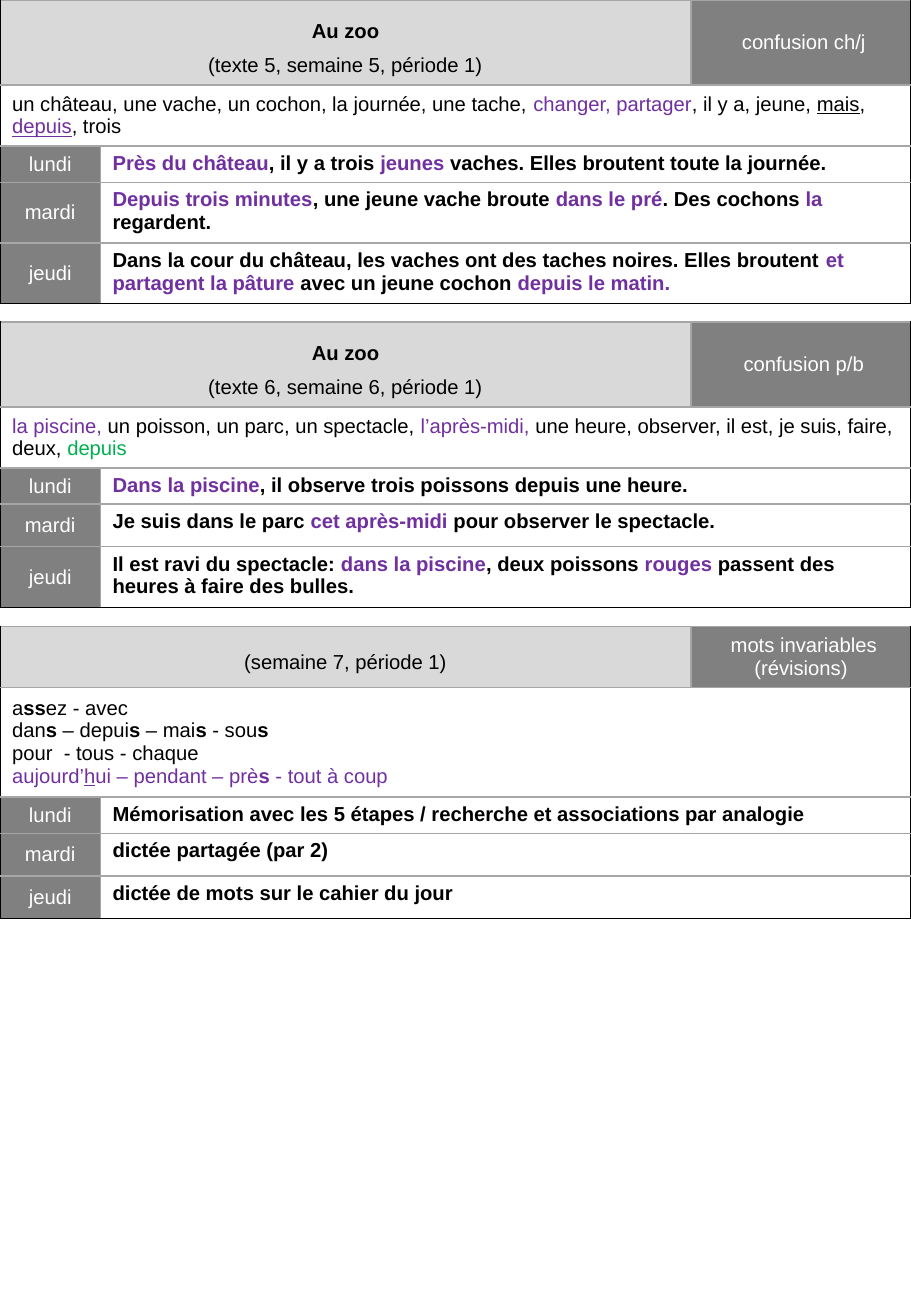
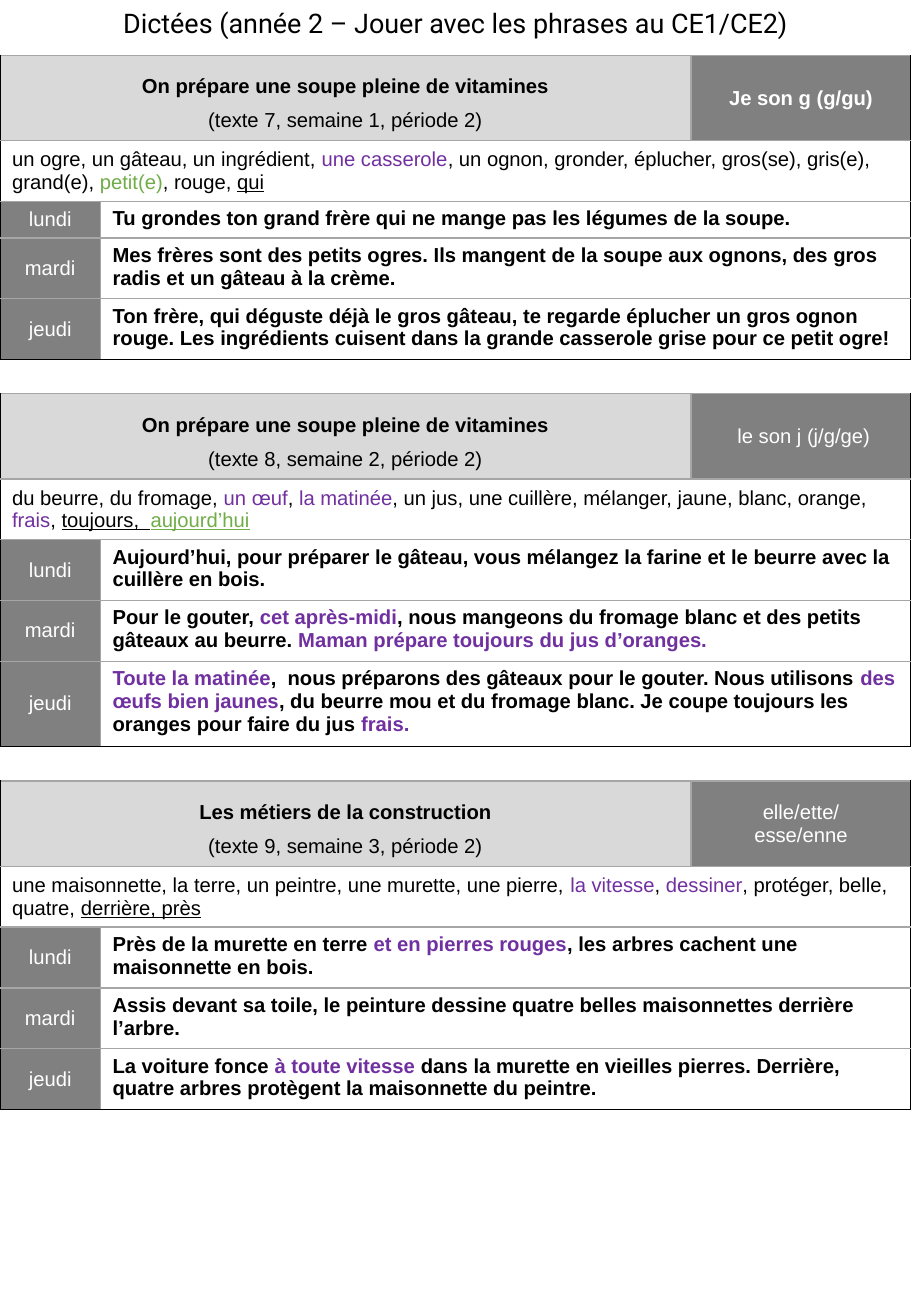
from dataclasses import dataclass

from lxml import etree
from pptx import Presentation
from pptx.dml.color import RGBColor
from pptx.enum import text
from pptx.oxml import ns
from pptx.util import Cm, Pt

DAYS = ["lundi", "mardi", "jeudi"]

SLIDES = [
    {
        "title": None,
        "dictations": [
            {
                "top": 0,
                "lines": (3, 2, 1, 2, 2),
                "heading": [[("Au zoo", "b")], ["(texte 5, semaine 5, période 1)"]],
                "focus": [[" confusion ch/j"]],
                "words": [[
                    "un château, une vache, un cochon, la journée, une tache, ",
                    ("changer, partager", "v"), ", il y a, jeune, ", ("mais", "u"), ", ",
                    ("depuis", "vu"), ", trois",
                ]],
                "sentences": [
                    [("Près du château", "v"), ", il y a trois ", ("jeunes", "v"),
                     " vaches. Elles broutent toute la journée."],
                    [("Depuis trois minutes", "v"), ", une jeune vache broute ",
                     ("dans le pré", "v"), ". Des cochons ", ("la", "v"), " regardent."],
                    ["Dans la cour du château, les vaches ont des taches noires. Elles broutent ",
                     ("et partagent la pâture ", "v"), "avec un jeune cochon ",
                     ("depuis le matin.", "v")],
                ],
            },
            {
                "top": 6.73,
                "lines": (3, 2, 1, 1, 2),
                "heading": [[("Au zoo", "b")], ["(texte 6, semaine 6, période 1)"]],
                "focus": [[" confusion p/b"]],
                "words": [[
                    ("la piscine,", "v"), " un poisson, un parc, un spectacle, ",
                    ("l’après-midi, ", "v"),
                    "une heure, observer, il est, je suis, faire, deux, ", ("depuis", "e"),
                ]],
                "sentences": [
                    [("Dans la piscine", "v"), ", il observe trois poissons depuis une heure."],
                    ["Je suis dans le parc ", ("cet après-midi ", "v"),
                     "pour observer le spectacle."],
                    ["Il est ravi du spectacle: ", ("dans la piscine", "v"),
                     ", deux poissons ", ("rouges ", "v"),
                     "passent des heures à faire des bulles."],
                ],
            },
            {
                "top": 13.1,
                "lines": (2, 4, 1, 1, 1),
                "heading": [["(semaine 7, période 1)"]],
                "focus": [[" mots invariables"], ["(révisions)"]],
                "words": [
                    ["a", ("ss", "b"), "ez - avec"],
                    ["dan", ("s", "b"), " – depui", ("s", "b"), " – mai", ("s", "b"),
                     " - sou", ("s", "b")],
                    ["pour  - tous - chaque"],
                    [("aujourd’", "v"), ("h", "vu"), ("ui – pendant – prè", "v"),
                     ("s", "vb"), (" - tout à coup", "v")],
                ],
                "sentences": [
                    ["Mémorisation avec les 5 étapes / recherche et associations par analogie"],
                    ["dictée partagée (par 2)"],
                    ["dictée de mots sur le cahier du jour"],
                ],
            },
        ],
    },
    {
        "title": "Dictées (année 2 – Jouer avec les phrases au CE1/CE2)",
        "dictations": [
            {
                "top": 1.16,
                "lines": (3, 2, 1, 2, 2),
                "heading": [[("On prépare une soupe pleine de vitamines", "b")],
                            ["(texte 7, semaine 1, période 2)"]],
                "focus": [[("Je son g (g/gu)", "b")]],
                "words": [[
                    "un ogre, un gâteau, un ingrédient, ", ("une casserole", "v"),
                    ", un ognon, gronder, éplucher, gros(se), gris(e), grand(e), ",
                    ("petit(e)", "g"), ", rouge, ", ("qui", "u"),
                ]],
                "sentences": [
                    ["Tu grondes ton grand frère qui ne mange pas les légumes de la soupe."],
                    ["Mes frères sont des petits ogres. Ils mangent de la soupe aux ognons, "
                     "des gros radis et un gâteau à la crème."],
                    ["Ton frère, qui déguste déjà le gros gâteau, te regarde éplucher un gros "
                     "ognon rouge. Les ingrédients cuisent dans la grande casserole grise pour "
                     "ce petit ogre!"],
                ],
            },
            {
                "top": 8.23,
                "lines": (3, 2, 2, 2, 3),
                "heading": [[("On prépare une soupe pleine de vitamines", "b")],
                            ["(texte 8, semaine 2, période 2)"]],
                "focus": [[" le son j (j/g/ge)"]],
                "words": [[
                    "du beurre, du fromage, ", ("un œuf", "v"), ", ", ("la matinée", "v"),
                    ", un jus, une cuillère, mélanger, jaune, blanc, orange, ",
                    ("frais", "v"), ", ", ("toujours,  ", "u"), ("aujourd’hui", "gu"),
                ]],
                "sentences": [
                    ["Aujourd’hui, pour préparer le gâteau, vous mélangez la farine et le "
                     "beurre avec la cuillère en bois."],
                    ["Pour le gouter, ", ("cet après-midi", "v"),
                     ", nous mangeons du fromage blanc et des petits gâteaux au beurre. ",
                     ("Maman prépare toujours du jus d’oranges.", "v")],
                    [("Toute la matinée", "v"),
                     ",  nous préparons des gâteaux pour le gouter. Nous utilisons ",
                     ("des œufs bien jaunes", "v"),
                     ", du beurre mou et du fromage blanc. Je coupe toujours les oranges pour "
                     "faire du jus ", ("frais.", "v")],
                ],
            },
            {
                "top": 16.33,
                "lines": (3, 2, 2, 2, 2),
                "heading": [[("Les métiers de la construction", "b")],
                            ["(texte 9, semaine 3, période 2)"]],
                "focus": [["elle/ette/"], ["esse/enne"]],
                "words": [[
                    "une maisonnette, la terre, un peintre, une murette, une pierre, ",
                    ("la vitesse", "v"), ", ", ("dessiner", "v"),
                    ", protéger, belle, quatre, ", ("derrière, près", "u"),
                ]],
                "sentences": [
                    ["Près de la murette en terre ", ("et en pierres rouges", "v"),
                     ", les arbres cachent une maisonnette en bois."],
                    ["Assis devant sa toile, le peinture dessine quatre belles maisonnettes "
                     "derrière l’arbre."],
                    ["La voiture fonce ", ("à toute vitesse ", "v"),
                     "dans la murette en vieilles pierres. Derrière, quatre arbres protègent "
                     "la maisonnette du peintre."],
                ],
            },
        ],
    },
]


@dataclass(frozen=True)
class Theme:
    black: str = "000000"
    white: str = "FFFFFF"
    violet: str = "7030A0"
    emerald: str = "00B050"
    green: str = "70AD47"
    heading: str = "D9D9D9"
    label: str = "808080"
    rule: str = "A6A6A6"
    body_font: str = "Arial"
    title_font: str = "Roboto"
    body_size: int = 12
    title_size: int = 16


THEME = Theme()
RUN_COLORS = {"v": THEME.violet, "e": THEME.emerald, "g": THEME.green}
CENTER = text.PP_ALIGN.CENTER
MIDDLE = text.MSO_ANCHOR.MIDDLE
TOP = text.MSO_ANCHOR.TOP

PAGE_WIDTH, PAGE_HEIGHT = 19.05, 27.51
COLUMNS = (2.1, 12.35, 4.6)
LINE_HEIGHT, ROW_PADDING, LATER_DAY_MINIMUM = 0.51, 0.25, 0.89
FIRST_DAY_ROW = 2


def write_text(frame, paragraphs, font=THEME.body_font, size=THEME.body_size,
               color=THEME.black, bold=False, align=text.PP_ALIGN.LEFT, spacing=1.0):
    for index, runs in enumerate(paragraphs):
        paragraph = frame.add_paragraph() if index else frame.paragraphs[0]
        paragraph.alignment = align
        paragraph.line_spacing = spacing
        for item in runs:
            content, flags = (item, "") if isinstance(item, str) else item
            run = paragraph.add_run()
            run.text = content
            run.font.name = font
            run.font.size = Pt(size)
            run.font.bold = bold or "b" in flags
            run.font.underline = "u" in flags
            run_color = next((RUN_COLORS[f] for f in flags if f in RUN_COLORS), color)
            run.font.color.rgb = RGBColor.from_string(run_color)


def set_borders(cell, colors):
    properties = cell._tc.get_or_add_tcPr()
    for side, color in zip("LRTB", colors):
        line = etree.SubElement(properties, ns.qn(f"a:ln{side}"), w=str(Pt(1)))
        fill = etree.SubElement(line, ns.qn("a:solidFill"))
        etree.SubElement(fill, ns.qn("a:srgbClr"), val=color)


def fill_cell(table, row, first, last, paragraphs, fill=THEME.white, anchor=MIDDLE, **style):
    cell = table.cell(row, first)
    if last > first:
        cell.merge(table.cell(row, last))
    outer_sides = (first == 0, last == len(COLUMNS) - 1, False, row == len(table.rows) - 1)
    set_borders(cell, [THEME.black if outer else THEME.rule for outer in outer_sides])
    cell.fill.solid()
    cell.fill.fore_color.rgb = RGBColor.from_string(fill)
    cell.vertical_anchor = anchor
    write_text(cell.text_frame, paragraphs, **style)


def row_height(row, lines):
    height = ROW_PADDING + LINE_HEIGHT * lines
    return max(height, LATER_DAY_MINIMUM) if row > FIRST_DAY_ROW else height


def add_dictation(slide, dictation):
    heights = [row_height(row, lines) for row, lines in enumerate(dictation["lines"])]
    table = slide.shapes.add_table(
        len(heights), len(COLUMNS), Cm(0), Cm(dictation["top"]),
        Cm(PAGE_WIDTH), Cm(sum(heights))).table
    table.first_row = table.horz_banding = False
    for column, width in zip(table.columns, COLUMNS):
        column.width = Cm(width)
    for row, height in zip(table.rows, heights):
        row.height = Cm(height)

    label = {"fill": THEME.label, "color": THEME.white, "align": CENTER}
    fill_cell(table, 0, 0, 1, dictation["heading"], fill=THEME.heading,
              align=CENTER, spacing=1.5)
    fill_cell(table, 0, 2, 2, dictation["focus"], **label)
    fill_cell(table, 1, 0, 2, dictation["words"])
    for row, (day, sentence) in enumerate(zip(DAYS, dictation["sentences"]), FIRST_DAY_ROW):
        fill_cell(table, row, 0, 0, [[day]], **label)
        fill_cell(table, row, 1, 2, [sentence], anchor=TOP, bold=True)


def add_title(slide, content):
    title = slide.shapes.title
    title.left, title.top, title.width, title.height = Cm(0), Cm(0), Cm(PAGE_WIDTH), Cm(0.94)
    frame = title.text_frame
    frame.word_wrap = True
    frame.auto_size = text.MSO_AUTO_SIZE.SHAPE_TO_FIT_TEXT
    frame.vertical_anchor = TOP
    write_text(frame, [[content]], font=THEME.title_font, size=THEME.title_size, align=CENTER)


def main():
    presentation = Presentation()
    presentation.slide_width = Cm(PAGE_WIDTH)
    presentation.slide_height = Cm(PAGE_HEIGHT)
    title_only, blank = presentation.slide_layouts[5], presentation.slide_layouts[6]
    for page in SLIDES:
        slide = presentation.slides.add_slide(title_only if page["title"] else blank)
        if page["title"]:
            add_title(slide, page["title"])
        for dictation in page["dictations"]:
            add_dictation(slide, dictation)
    presentation.save("out.pptx")


if __name__ == "__main__":
    main()
